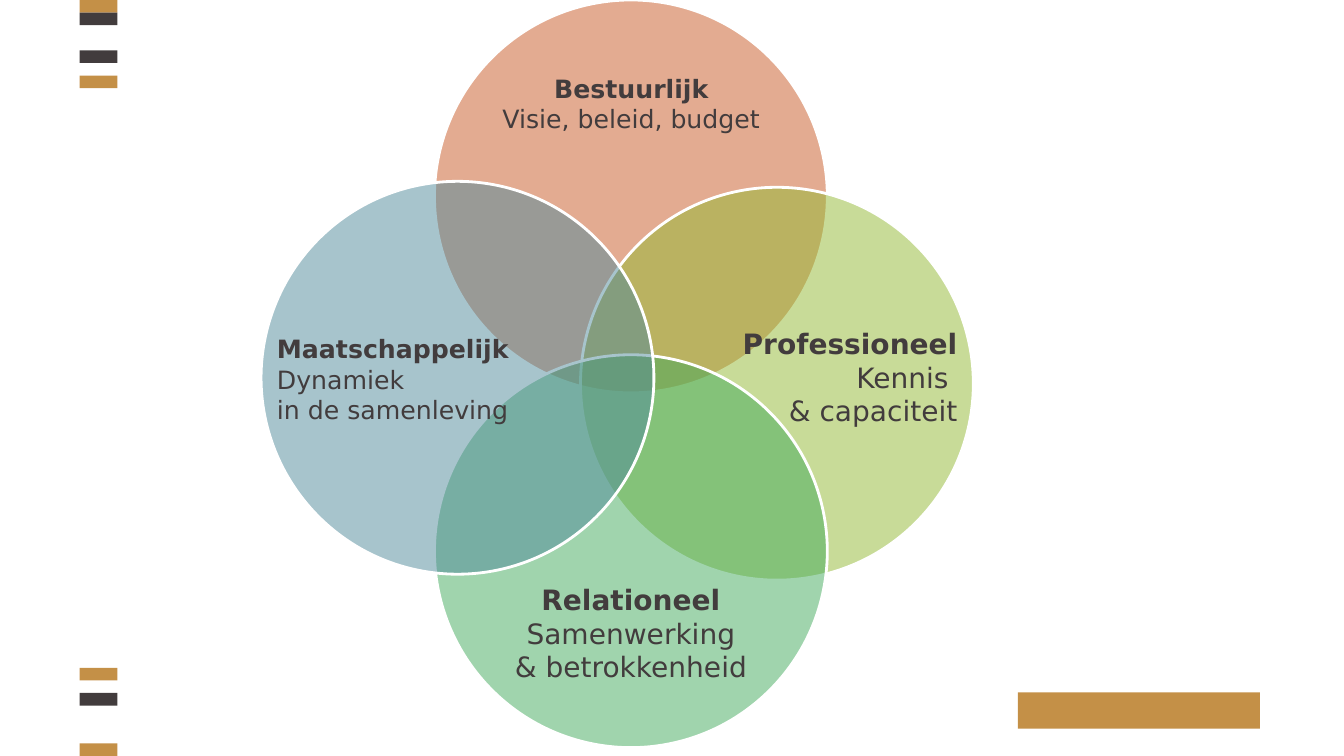
from lxml.etree import SubElement
from pptx import Presentation
from pptx.dml.color import RGBColor
from pptx.enum.shapes import MSO_SHAPE
from pptx.enum.text import MSO_AUTO_SIZE, PP_ALIGN
from pptx.oxml.ns import qn
from pptx.util import Cm, Pt

GOLD = RGBColor(0xC4, 0x90, 0x47)
DARK = RGBColor(0x42, 0x3C, 0x3D)
WHITE = RGBColor(0xFF, 0xFF, 0xFF)
ORANGE = RGBColor(0xC8, 0x58, 0x25)
LIME = RGBColor(0x93, 0xB9, 0x33)
GREEN = RGBColor(0x42, 0xAA, 0x5C)
BLUE = RGBColor(0x50, 0x8A, 0x9B)

FONT = "DejaVu Sans"
SLIDE_WIDTH, SLIDE_HEIGHT = 33.87, 19.05
BAR_ROWS = 60
BAR_LEFT, BAR_WIDTH = 2.01, 0.95
DIAMETER = 9.9
OPACITY = "50000"

BARS = [(0, GOLD), (1, DARK), (4, DARK), (6, GOLD), (53, GOLD), (55, DARK), (59, GOLD)]
LOGO_BLOCK = (25.65, 17.45, 6.1, 0.91)
CIRCLES = [
    (10.95, 0, ORANGE),
    (14.63, 4.72, LIME),
    (10.95, 8.94, GREEN),
    (6.58, 4.57, BLUE),
]
LABELS = [
    ("Bestuurlijk\nVisie, beleid, budget",
     (12.24, 1.85, 7.34, 1.55), 18, PP_ALIGN.CENTER, 0),
    ("Maatschappelijk\vDynamiek\vin de samenleving",
     (6.73, 8.28, 10.21, 2.57), 18, PP_ALIGN.LEFT, 1),
    ("Professioneel\vKennis \v& capaciteit",
     (15.57, 8.1, 8.81, 2.82), 20, PP_ALIGN.RIGHT, 1),
    ("Relationeel\vSamenwerking\v& betrokkenheid",
     (7.44, 14.55, 16.92, 2.82), 20, PP_ALIGN.CENTER, 1),
]


def add_filled_shape(slide, kind, box, color):
    shape = slide.shapes.add_shape(kind, *map(Cm, box))
    shape.shadow.inherit = False
    shape.fill.solid()
    shape.fill.fore_color.rgb = color
    shape.line.fill.background()
    return shape


def add_circle(slide, left, top, color):
    circle = add_filled_shape(slide, MSO_SHAPE.OVAL, (left, top, DIAMETER, DIAMETER), color)
    fill_color = circle._element.spPr.find(qn("a:solidFill")).find(qn("a:srgbClr"))
    SubElement(fill_color, qn("a:alpha")).set("val", OPACITY)
    circle.line.color.rgb = WHITE
    circle.line.width = Pt(2)


def add_label(slide, text, box, size, alignment, inset):
    text_frame = slide.shapes.add_textbox(*map(Cm, box)).text_frame
    text_frame.word_wrap = True
    text_frame.auto_size = MSO_AUTO_SIZE.SHAPE_TO_FIT_TEXT
    text_frame.margin_left = text_frame.margin_right = Cm(0.25 * inset)
    text_frame.margin_top = text_frame.margin_bottom = Cm(0.13 * inset)
    text_frame.text = text
    for paragraph in text_frame.paragraphs:
        paragraph.alignment = alignment
    runs = [run for paragraph in text_frame.paragraphs for run in paragraph.runs]
    for index, run in enumerate(runs):
        run.font.name = FONT
        run.font.size = Pt(size)
        run.font.bold = index == 0
        run.font.color.rgb = DARK


def main():
    presentation = Presentation()
    presentation.slide_width = Cm(SLIDE_WIDTH)
    presentation.slide_height = Cm(SLIDE_HEIGHT)
    slide = presentation.slides.add_slide(presentation.slide_layouts[6])

    add_filled_shape(slide, MSO_SHAPE.RECTANGLE, LOGO_BLOCK, GOLD)
    bar_height = SLIDE_HEIGHT / BAR_ROWS
    for row, color in BARS:
        box = (BAR_LEFT, row * bar_height, BAR_WIDTH, bar_height)
        add_filled_shape(slide, MSO_SHAPE.RECTANGLE, box, color)
    for circle in CIRCLES:
        add_circle(slide, *circle)
    for label in LABELS:
        add_label(slide, *label)

    presentation.save("out.pptx")


if __name__ == "__main__":
    main()
